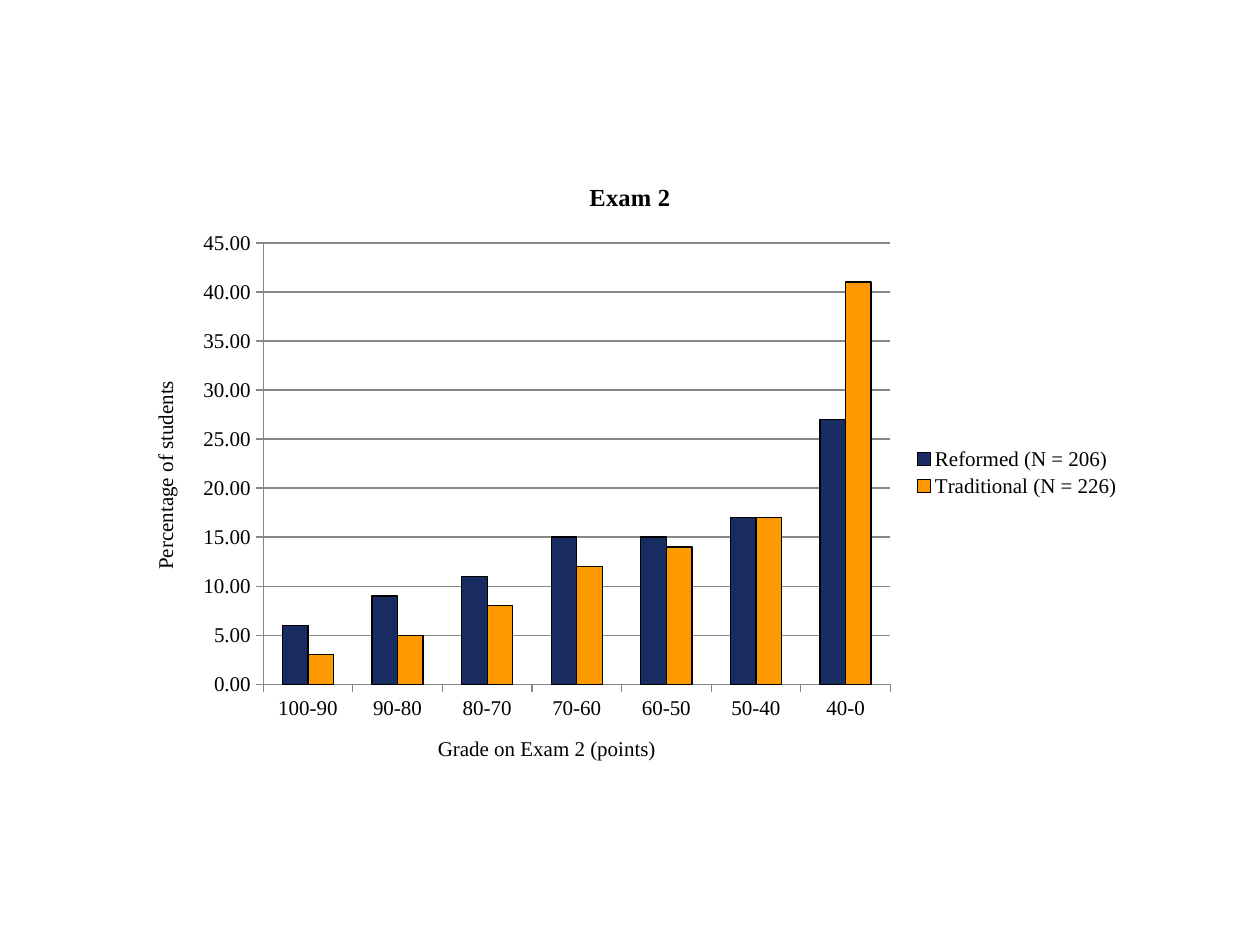
from pptx import Presentation
from pptx import util as u
from pptx.chart.data import CategoryChartData
from pptx.dml.color import RGBColor
from pptx.enum import chart as ch

# Content
FONT = "Times New Roman"
TITLE = "Exam 2"
X_TITLE = "Grade on Exam 2 (points)"
Y_TITLE = "Percentage of students"
GRADES = ["100-90", "90-80", "80-70", "70-60", "60-50", "50-40", "40-0"]
GROUPS = [
    ("Reformed (N = 206)", "192C62", [6, 9, 11, 15, 15, 17, 27]),
    ("Traditional (N = 226)", "FE9900", [3, 5, 8, 12, 14, 17, 41]),
]


def rgb(code):
    return RGBColor.from_string(code)


def set_font(font, size, bold=False):
    font.name = FONT
    font.size = u.Pt(size)
    font.bold = bold
    font.color.rgb = rgb("000000")


def set_line(line, color):
    line.color.rgb = rgb(color)
    line.width = u.Pt(0.75)


def set_title(owner, text, size, bold=False):
    tf = owner.text_frame
    tf.text = text
    set_font(tf.paragraphs[0].font, size, bold)


# Slide
prs = Presentation()
prs.slide_width, prs.slide_height = u.Cm(25.4), u.Cm(19.05)
s = prs.slides.add_slide(prs.slide_layouts[6])

# Chart, centred on the slide
data = CategoryChartData(number_format="0.00")
data.categories = GRADES
for name, _, values in GROUPS:
    data.add_series(name, values)
w, h = u.Cm(20.32), u.Cm(12.7)
chart = s.shapes.add_chart(
    ch.XL_CHART_TYPE.COLUMN_CLUSTERED,
    (prs.slide_width - w) // 2, (prs.slide_height - h) // 2, w, h, data).chart
set_font(chart.font, 12)
set_title(chart.chart_title, TITLE, 14, bold=True)
chart.chart_title.include_in_layout = False

# Columns
plot = chart.plots[0]
plot.gap_width, plot.overlap = 150, 0
plot.vary_by_categories = False
for series, (_, color, _) in zip(plot.series, GROUPS):
    series.format.fill.solid()
    series.format.fill.fore_color.rgb = rgb(color)
    set_line(series.format.line, "000000")

# Axes
for axis, text in ((chart.category_axis, X_TITLE), (chart.value_axis, Y_TITLE)):
    set_title(axis.axis_title, text, 12)
    set_font(axis.tick_labels.font, 12)
    axis.major_tick_mark = ch.XL_TICK_MARK.OUTSIDE
    axis.minor_tick_mark = ch.XL_TICK_MARK.NONE
    set_line(axis.format.line, "878787")
y = chart.value_axis
y.minimum_scale, y.maximum_scale, y.major_unit = 0, 45, 5
y.tick_labels.number_format = "0.00"
y.tick_labels.number_format_is_linked = False
y.has_major_gridlines = True
set_line(y.major_gridlines.format.line, "878787")

# Legend
chart.has_legend = True
chart.legend.position = ch.XL_LEGEND_POSITION.RIGHT
chart.legend.include_in_layout = False
set_font(chart.legend.font, 12)

prs.save("out.pptx")
